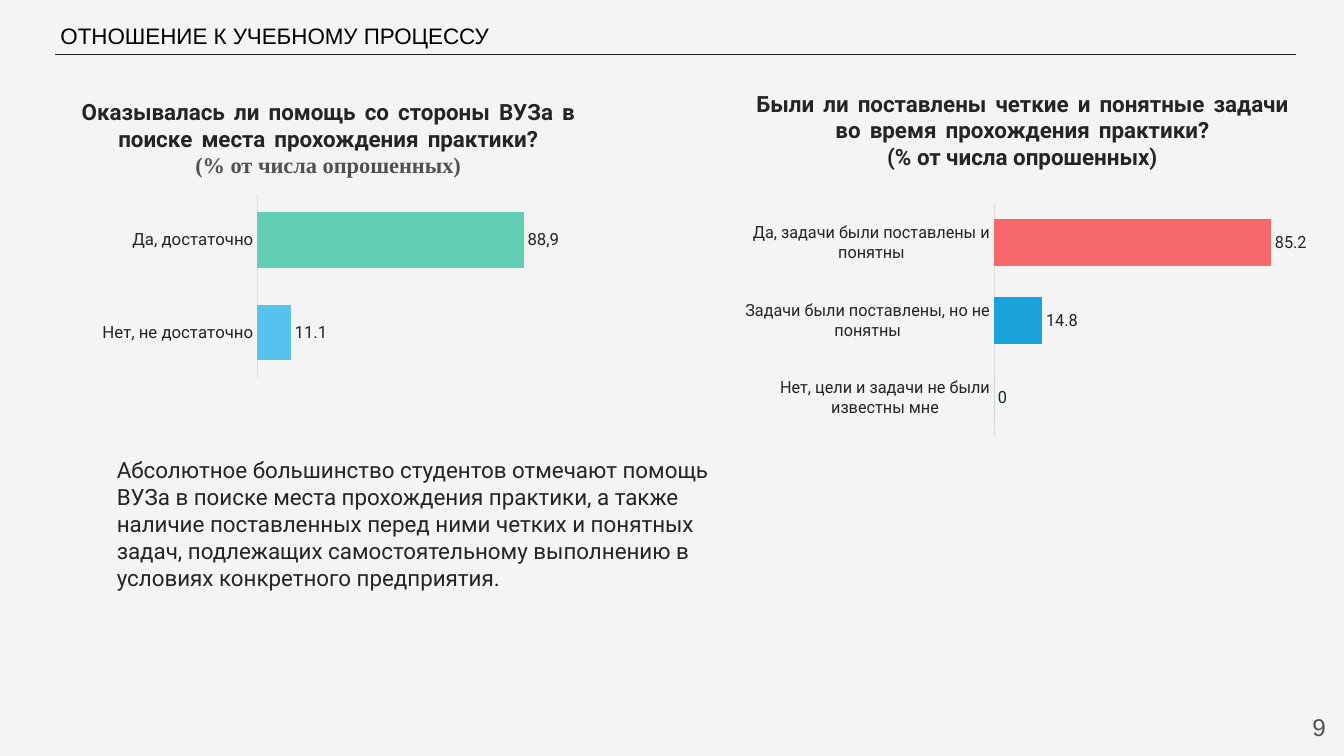
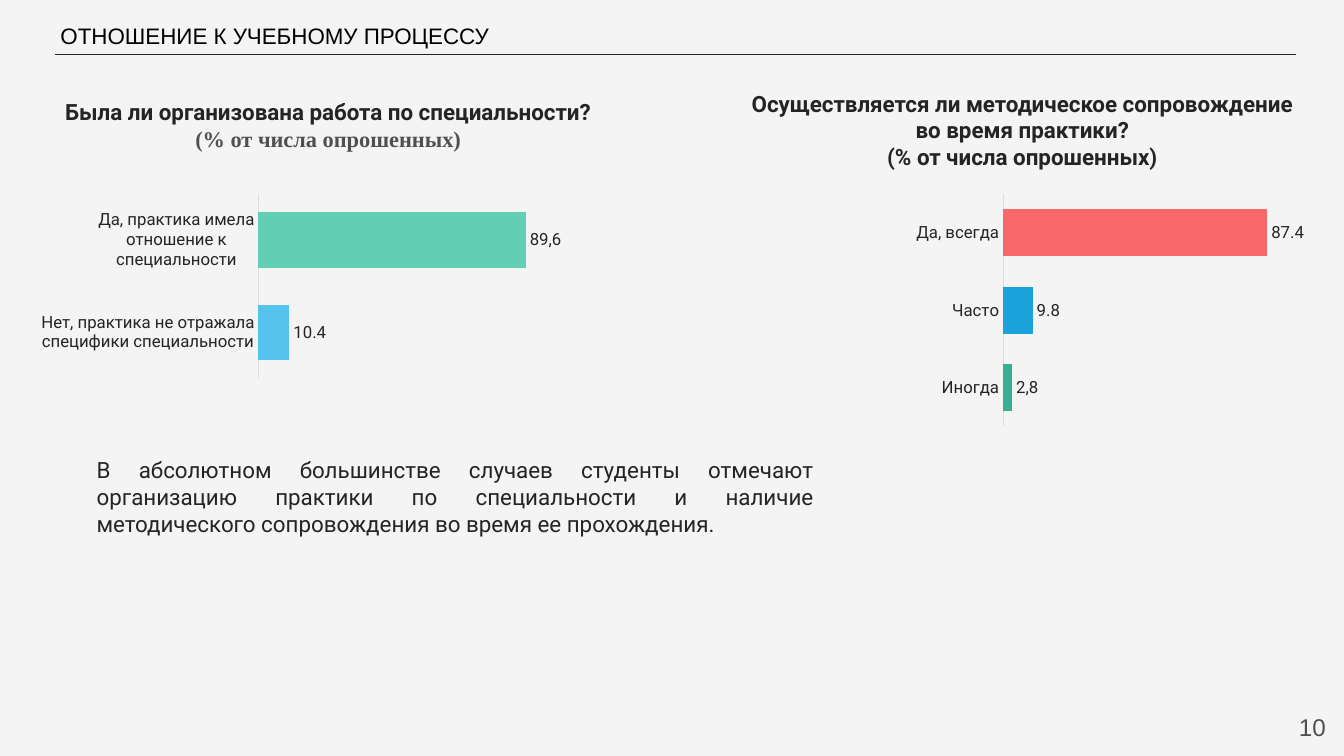
from dataclasses import dataclass

from lxml import etree
from pptx import Presentation
from pptx.chart.data import CategoryChartData
from pptx.dml.color import RGBColor
from pptx.enum.chart import XL_CHART_TYPE, XL_LABEL_POSITION, XL_TICK_MARK
from pptx.enum.shapes import MSO_CONNECTOR
from pptx.enum.text import MSO_ANCHOR, PP_ALIGN
from pptx.oxml import parse_xml
from pptx.oxml.ns import nsdecls, qn
from pptx.util import Inches, Pt

BAR = XL_CHART_TYPE.BAR_CLUSTERED
OUTSIDE_END = XL_LABEL_POSITION.OUTSIDE_END
NO_TICKS = XL_TICK_MARK.NONE
STRAIGHT = MSO_CONNECTOR.STRAIGHT
TOP, MIDDLE = MSO_ANCHOR.TOP, MSO_ANCHOR.MIDDLE
LEFT, CENTER, RIGHT, JUSTIFY = (
    PP_ALIGN.LEFT, PP_ALIGN.CENTER, PP_ALIGN.RIGHT, PP_ALIGN.JUSTIFY)

# Content
SECTION = "ОТНОШЕНИЕ К УЧЕБНОМУ ПРОЦЕССУ"
UNIT = "(% от числа опрошенных)"

# Answers run from the bottom bar up: (answer, value, special label)
SLIDES = [
    {
        "number": "9",
        "word_gap": 2.5,
        "left": {
            "question": "Оказывалась ли помощь со стороны ВУЗа в поиске "
                        "места прохождения практики?",
            "answers": [("Нет, не достаточно", 11.1, None),
                        ("Да, достаточно", 88.9, "88,9")],
            "scale": 100, "plot_top": 0,
        },
        "right": {
            "question": "Были ли поставлены четкие и понятные задачи во время "
                        "прохождения практики?",
            "answers": [("Нет, цели и задачи не были известны мне", 0, None),
                        ("Задачи были поставлены, но не понятны", 14.8, None),
                        ("Да, задачи были поставлены и понятны", 85.2, None)],
            "scale": 90, "plot_top": 0.04,
        },
        "conclusion": "Абсолютное большинство студентов отмечают помощь ВУЗа в "
                      "поиске места прохождения практики, а также наличие "
                      "поставленных перед ними четких и понятных задач, "
                      "подлежащих самостоятельному выполнению в условиях "
                      "конкретного предприятия.",
        "conclusion_box": (1.06, 4.48, 6.62, 1.45),
        "conclusion_align": LEFT,
    },
    {
        "number": "10",
        "word_gap": 0,
        "left": {
            "question": "Была ли организована работа по специальности?",
            "answers": [
                ("Нет, практика не отражала специфики специальности", 10.4, None),
                ("Да, практика имела отношение к специальности", 89.6, "89,6")],
            "scale": 100, "plot_top": 0,
        },
        "right": {
            "question": "Осуществляется ли методическое сопровождение во время "
                        "практики?",
            "answers": [("Иногда", 3, "2,8"),
                        ("Часто", 9.8, None),
                        ("Да, всегда", 87.4, None)],
            "scale": 100, "plot_top": 0,
        },
        "conclusion": "В абсолютном большинстве случаев студенты отмечают "
                      "организацию практики по специальности и наличие "
                      "методического сопровождения во время ее прохождения.",
        "conclusion_box": (0.86, 4.48, 7.31, 0.91),
        "conclusion_align": JUSTIFY,
    },
]


@dataclass(frozen=True)
class Theme:
    background: str = "F4F4F4"
    ink: str = "242424"
    title: str = "000000"
    muted: str = "505050"
    axis: str = "DEDEDE"
    title_font: str = "Arial"
    text_font: str = "Roboto"
    unit_font: str = "Times New Roman"
    text_size: float = 16
    number_size: float = 17.3
    chart_size: float = 12
    hairline: float = 0.75


THEME = Theme()

# Layout of the two halves; plot is left, width and height as chart fractions
HALVES = {
    "left": {"heading": (0.5, 0.84, 5.51, 1.08), "inset": 0.13,
             "unit_style": (THEME.unit_font, THEME.muted),
             "chart": (0.41, 1.92, 5.51, 2.32), "plot": (0.389, 0.539, 0.79),
             "bars": ("57C2EC", "62CFB5")},
    "right": {"heading": (7.32, 0.84, 5.64, 0.91), "inset": None,
              "unit_style": (THEME.text_font, THEME.ink),
              "chart": (7.16, 1.92, 5.8, 2.56), "plot": (0.481, 0.517, 0.903),
              "bars": ("36AF92", "19A3DA", "F7686B")},
}
TITLE_BOX = (0.5, 0.17, 12.46, 0.37)
NUMBER_BOX = (12.48, 6.93, 0.8, 0.57)
RULE = (0.55, 0.54, 12.85, 0.54)


def inches(box):
    return [Inches(length) for length in box]


def set_font(font, size, name=THEME.text_font, color=THEME.ink, bold=False):
    font.size, font.name, font.bold = Pt(size), name, bold
    font.color.rgb = RGBColor.from_string(color)


def add_text_frame(slide, box, inset=None):
    frame = slide.shapes.add_textbox(*inches(box)).text_frame
    frame.word_wrap = True
    if inset is not None:
        frame.margin_left = frame.margin_right = Inches(inset)
        frame.margin_top = frame.margin_bottom = Inches(inset)
    return frame


def add_words(paragraph, text, gap):
    """Write text with its word spaces widened by gap points."""
    for index, word in enumerate(text.split()):
        if index:
            space = paragraph.add_run()
            space.text = " "
            space._r.get_or_add_rPr().set("spc", str(round(gap * 100)))
        paragraph.add_run().text = word


def style_layout(layout, slide):
    """Put the background, title place and rule on the shared layout."""
    fill = layout.background.fill
    fill.solid()
    fill.fore_color.rgb = RGBColor.from_string(THEME.background)
    title = layout.placeholders[0]
    title.left, title.top, title.width, title.height = inches(TITLE_BOX)
    rule = slide.shapes.add_connector(STRAIGHT, *inches(RULE))
    rule.line.color.rgb = RGBColor.from_string(THEME.ink)
    rule.line.width = Pt(THEME.hairline)
    etree.SubElement(rule.element.spPr, qn("a:effectLst"))
    layout.shapes.element.append(rule.element)


def add_heading(slide, half, question, word_gap):
    frame = add_text_frame(slide, half["heading"], half["inset"])
    asked = frame.paragraphs[0]
    if word_gap:
        add_words(asked, question, word_gap)
    else:
        asked.text = question
    unit = frame.add_paragraph()
    unit.text = UNIT
    styles = (THEME.text_font, THEME.ink), half["unit_style"]
    for paragraph, style in zip((asked, unit), styles):
        paragraph.alignment = CENTER
        set_font(paragraph.font, THEME.text_size, *style, bold=True)


def place_plot(chart, left, top, width, height):
    area = chart.element.xpath("c:chart/c:plotArea")[0]
    for old in area.findall(qn("c:layout")):
        area.remove(old)
    modes = "".join(f'<c:{axis}Mode val="edge"/>' for axis in "xy")
    sizes = "".join(f'<c:{key} val="{value}"/>'
                    for key, value in zip("xywh", (left, top, width, height)))
    area.insert(0, parse_xml(
        f'<c:layout {nsdecls("c")}><c:manualLayout>'
        f'<c:layoutTarget val="inner"/>{modes}{sizes}'
        '</c:manualLayout></c:layout>'))


def add_answer_chart(slide, half, survey):
    names, values, labels = zip(*survey["answers"])
    data = CategoryChartData()
    data.categories = names
    data.add_series("Series 1", values)
    chart = slide.shapes.add_chart(BAR, *inches(half["chart"]), data).chart
    chart.has_legend = chart.has_title = False
    set_font(chart.font, THEME.chart_size)

    # Axes
    value_axis, answer_axis = chart.value_axis, chart.category_axis
    value_axis.minimum_scale, value_axis.maximum_scale = 0, survey["scale"]
    value_axis.has_major_gridlines = value_axis.visible = False
    answer_axis.major_tick_mark = answer_axis.minor_tick_mark = NO_TICKS
    answer_axis.format.line.color.rgb = RGBColor.from_string(THEME.axis)
    answer_axis.format.line.width = Pt(THEME.hairline)
    set_font(answer_axis.tick_labels.font, THEME.chart_size)

    # Bars and their labels
    bars = chart.plots[0]
    bars.gap_width, bars.vary_by_categories = 66, False
    series = bars.series[0]
    series.data_labels.show_value = True
    series.data_labels.position = OUTSIDE_END
    set_font(series.data_labels.font, THEME.chart_size)
    for index, (color, label) in enumerate(zip(half["bars"], labels)):
        point = series.points[index]
        point.format.fill.solid()
        point.format.fill.fore_color.rgb = RGBColor.from_string(color)
        if label:
            paragraph = point.data_label.text_frame.paragraphs[0]
            paragraph.text = label
            set_font(paragraph.font, THEME.chart_size)
            point.data_label.position = OUTSIDE_END

    left, width, height = half["plot"]
    place_plot(chart, left, survey["plot_top"], width, height)


def fill_slide(slide, content):
    # Section title
    title = slide.shapes.title.text_frame
    title.text = SECTION
    title.vertical_anchor = TOP
    title.paragraphs[0].alignment = LEFT
    set_font(title.paragraphs[0].font, THEME.text_size, THEME.title_font,
             THEME.title)

    # Survey questions
    for side, half in HALVES.items():
        survey = content[side]
        add_heading(slide, half, survey["question"], content["word_gap"])
        add_answer_chart(slide, half, survey)

    # Conclusion
    conclusion = add_text_frame(slide, content["conclusion_box"]).paragraphs[0]
    conclusion.text = content["conclusion"]
    conclusion.alignment = content["conclusion_align"]
    set_font(conclusion.font, THEME.text_size)

    # Page number
    footer = add_text_frame(slide, NUMBER_BOX, 0.13)
    footer.vertical_anchor = MIDDLE
    number = footer.paragraphs[0]
    number.text = content["number"]
    number.alignment = RIGHT
    set_font(number.font, THEME.number_size, THEME.title_font, THEME.muted)


def main():
    deck = Presentation()
    deck.slide_width, deck.slide_height = Inches(13.33), Inches(7.5)
    layout = deck.slide_layouts.get_by_name("Title Only")
    slides = [deck.slides.add_slide(layout) for _ in SLIDES]
    style_layout(layout, slides[0])
    for slide, content in zip(slides, SLIDES):
        fill_slide(slide, content)
    deck.save("out.pptx")


if __name__ == "__main__":
    main()
